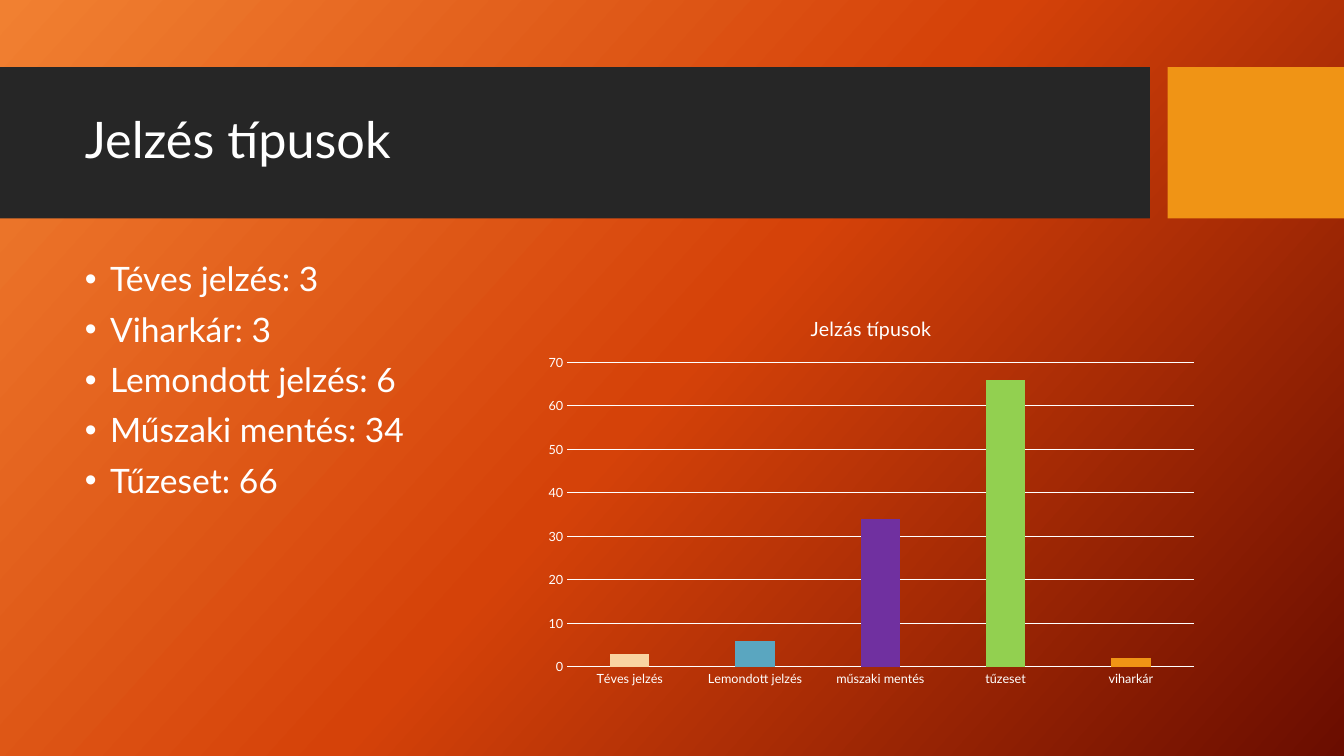
from copy import deepcopy
from dataclasses import dataclass

from lxml import etree
from pptx import Presentation
from pptx import util as u
from pptx.chart.data import CategoryChartData
from pptx.dml.color import RGBColor
from pptx.enum import chart as ch, shapes, text
from pptx.oxml.ns import qn

FONT, WHITE, AMBER = "Lato", "FFFFFF", "F09415"
CELL = u.Inches(1) / 12  # the slide is 160 columns by 90 rows


@dataclass(frozen=True)
class Box:
    col: float
    row: float
    cols: float
    rows: float

    def emu(self) -> list[int]:
        return [round(v * CELL) for v in (self.col, self.row, self.cols, self.rows)]


@dataclass(frozen=True)
class Band:
    box: Box
    color: str


@dataclass(frozen=True)
class Bar:
    label: str
    value: int
    color: str


BANDS = [Band(Box(0, 8, 136.9, 18), "262626"), Band(Box(139, 8, 21, 18), AMBER)]
TITLE_BOX = Box(8.9, 9.8, 126.1, 14.2)
BODY_BOX = Box(8.9, 30.7, 126.1, 47.3)
CHART_BOX = Box(63.7, 35.4, 80, 47.3)
COUNTS = ["Téves jelzés: 3", "Viharkár: 3", "Lemondott jelzés: 6",
          "Műszaki mentés: 34", "Tűzeset: 66"]
BARS = [Bar("Téves jelzés", 3, "F9D4A1"), Bar("Lemondott jelzés", 6, "5AA6C0"),
        Bar("műszaki mentés", 34, "7030A0"), Bar("tűzeset", 66, "92D050"),
        Bar("viharkár", 2, AMBER)]


def rgb(color: str) -> RGBColor:
    return RGBColor.from_string(color)


def style(font, size: float) -> None:
    font.name, font.size, font.bold = FONT, u.Pt(size), False
    font.color.rgb = rgb(WHITE)


def paint_background(s, colors: list[str], angle: float) -> None:
    fill = s.background.fill
    fill.gradient()
    fill.gradient_angle = 360 - angle
    stop_list = s.element.find(".//" + qn("a:gsLst"))
    stop_list.append(deepcopy(stop_list[-1]))
    for i, (stop, color) in enumerate(zip(fill.gradient_stops, colors)):
        stop.position = i / (len(colors) - 1)
        stop.color.rgb = rgb(color)


def draw_band(s, band: Band) -> None:
    sp = s.shapes.add_shape(shapes.MSO_SHAPE.RECTANGLE, *band.box.emu())
    sp.shadow.inherit = False
    sp.fill.solid()
    sp.fill.fore_color.rgb = rgb(band.color)
    sp.line.fill.background()


def put_text(sp, box: Box, lines: list[str], *, size: float, anchor,
             bullet: str = "", before: float = 0) -> None:
    sp.left, sp.top, sp.width, sp.height = box.emu()
    tf = sp.text_frame
    tf.word_wrap, tf.auto_size = True, text.MSO_AUTO_SIZE.NONE
    tf.vertical_anchor = anchor
    for i, line in enumerate(lines):
        p = tf.paragraphs[0] if i == 0 else tf.add_paragraph()
        if bullet:
            pPr = p._p.get_or_add_pPr()
            pPr.set("marL", str(u.Inches(0.25)))
            pPr.set("indent", str(-u.Inches(0.25)))
            etree.SubElement(pPr, qn("a:buChar"), char=bullet)
        p.alignment = text.PP_ALIGN.LEFT
        p.line_spacing = 0.9
        p.space_before = u.Pt(before if i else 0)
        r = p.add_run()
        r.text = line
        style(r.font, size)


def white_line(line) -> None:
    line.color.rgb = rgb(WHITE)
    line.width = u.Pt(0.75)


def draw_chart(s, box: Box, title: str, bars: list[Bar]) -> None:
    data = CategoryChartData()
    data.categories = [b.label for b in bars]
    data.add_series("Series 1", [b.value for b in bars])
    kind = ch.XL_CHART_TYPE.COLUMN_CLUSTERED
    chart = s.shapes.add_chart(kind, *box.emu(), data).chart
    style(chart.font, 10)
    chart.has_legend = False

    # Title
    chart.has_title = True
    chart.chart_title.include_in_layout = False
    p = chart.chart_title.text_frame.paragraphs[0]
    r = p.add_run()
    r.text = title
    style(r.font, 14)

    # Axes
    for axis in (chart.category_axis, chart.value_axis):
        axis.major_tick_mark = axis.minor_tick_mark = ch.XL_TICK_MARK.NONE
        style(axis.tick_labels.font, 9)
    white_line(chart.category_axis.format.line)
    values = chart.value_axis
    values.minimum_scale, values.maximum_scale, values.major_unit = 0, 70, 10
    values.format.line.fill.background()
    white_line(values.major_gridlines.format.line)

    # Columns
    plot = chart.plots[0]
    plot.gap_width, plot.overlap, plot.vary_by_categories = 219, -27, False
    series = plot.series[0]
    series.invert_if_negative = False
    for i, bar in enumerate(bars):
        fill = series.points[i].format.fill
        fill.solid()
        fill.fore_color.rgb = rgb(bar.color)


def main() -> None:
    prs = Presentation()
    prs.slide_width, prs.slide_height = round(160 * CELL), round(90 * CELL)
    s = prs.slides.add_slide(prs.slide_layouts[1])
    title, body = s.placeholders[0], s.placeholders[1]

    # Background and bands, with the placeholders brought in front
    paint_background(s, ["F18031", "D54209", "6A0D00"], 42)
    for band in BANDS:
        draw_band(s, band)
    for sp in (title, body):
        s.shapes.element.append(sp.element)

    # Content
    put_text(title, TITLE_BOX, ["Jelzés típusok"], size=36,
             anchor=text.MSO_ANCHOR.MIDDLE)
    put_text(body, BODY_BOX, COUNTS, size=24, anchor=text.MSO_ANCHOR.TOP,
             bullet="•", before=10)
    draw_chart(s, CHART_BOX, "Jelzás típusok", BARS)
    prs.save("out.pptx")


if __name__ == "__main__":
    main()
